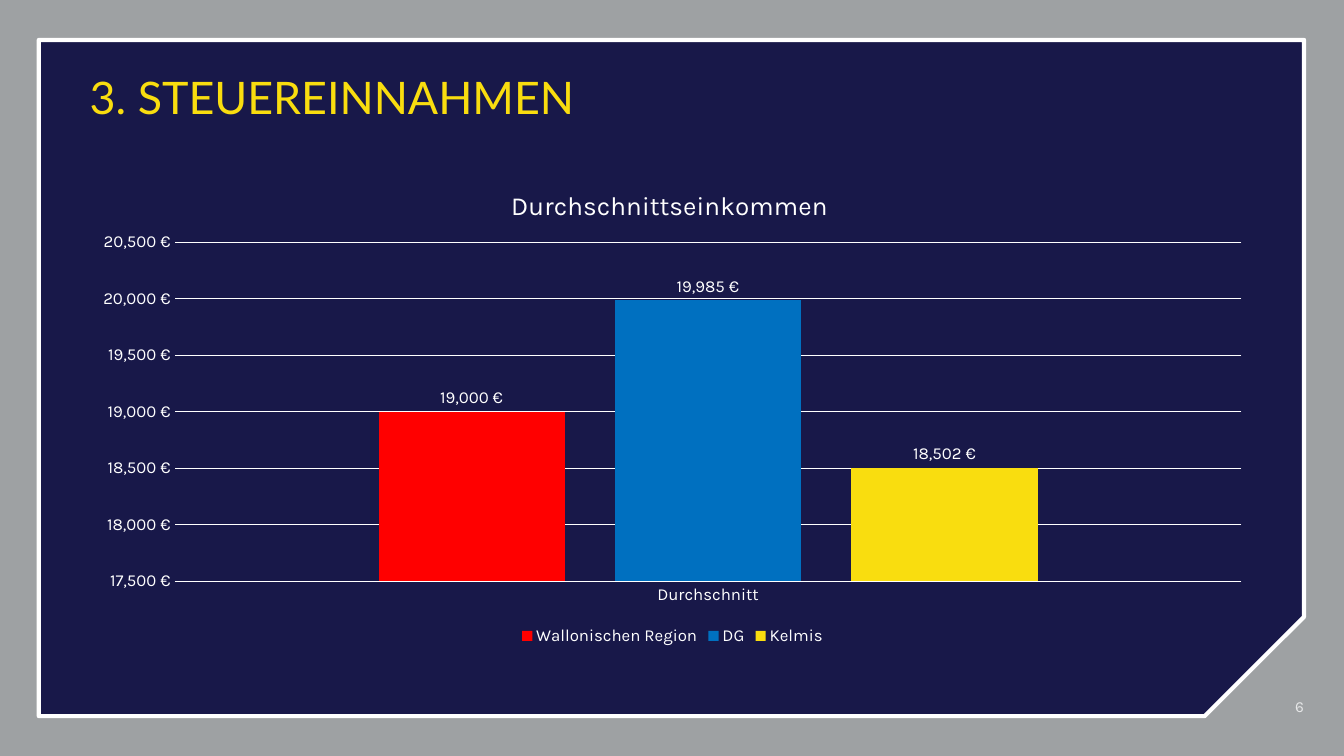
from lxml import etree
from pptx import Presentation
from pptx.chart.data import CategoryChartData
from pptx.dml.color import RGBColor
from pptx.enum.chart import XL_CHART_TYPE, XL_LABEL_POSITION, XL_LEGEND_POSITION, XL_TICK_MARK
from pptx.enum.shapes import MSO_SHAPE
from pptx.enum.text import MSO_ANCHOR, PP_ALIGN
from pptx.oxml.ns import qn
from pptx.util import Pt

SNIP = MSO_SHAPE.SNIP_1_RECTANGLE
COLUMN = XL_CHART_TYPE.COLUMN_CLUSTERED
ABOVE = XL_LABEL_POSITION.OUTSIDE_END
BELOW = XL_LEGEND_POSITION.BOTTOM
NO_TICK = XL_TICK_MARK.NONE
MIDDLE, BOTTOM = MSO_ANCHOR.MIDDLE, MSO_ANCHOR.BOTTOM
LEFT, RIGHT = PP_ALIGN.LEFT, PP_ALIGN.RIGHT
PX = 9525
EURO = '#,##0\\ "€"'


class Theme:
    back = "9EA1A3"
    panel = "181849"
    white = "FFFFFF"
    pale = "E6E7E8"
    red = "FF0000"
    blue = "0070C0"
    gold = "F9DD0F"
    head = {"name": "Lato", "size": Pt(32)}
    page = {"name": "Karla", "size": Pt(11)}
    label = {"name": "Karla", "size": Pt(12)}
    title = {"name": "Karla", "size": Pt(18.6), "bold": False}


BARS = [
    ("Wallonischen Region", 19000, Theme.red),
    ("DG", 19985, Theme.blue),
    ("Kelmis", 18502, Theme.gold),
]


def put(item, form):
    for key, value in form.items():
        setattr(item, key, value)


def paint(fill, color):
    fill.solid()
    fill.fore_color.rgb = RGBColor.from_string(color)


def style(font, form, color):
    put(font, form)
    font.color.rgb = RGBColor.from_string(color)


def stroke(line, color, width):
    paint(line.fill, color)
    line.width = Pt(width)


def scale(box):
    return [n * PX for n in box]


def panel(slide, box):
    shape = slide.shapes.add_shape(SNIP, *scale(box))
    shape.shadow.inherit = False
    shape.adjustments[0] = 0.147
    shape.rotation = 180
    shape._element.spPr.find(qn("a:xfrm")).set("flipH", "1")
    paint(shape.fill, Theme.panel)
    stroke(shape.line, Theme.white, 3)


def write(slide, box, text, form, color, frame, para):
    body = slide.shapes.add_textbox(*scale(box)).text_frame
    put(body, {"word_wrap": True, **frame})
    first = body.paragraphs[0]
    put(first, para)
    run = first.add_run()
    run.text = text
    style(run.font, form, color)


def place(owner, inner, **spots):
    old = owner.find(qn("c:layout"))
    if old is None:
        old = etree.Element(qn("c:layout"))
        after = owner.find(qn("c:tx"))
        if after is None:
            owner.insert(0, old)
        else:
            after.addnext(old)
    manual = etree.SubElement(old, qn("c:manualLayout"))
    rows = [("layoutTarget", "inner")] if inner else []
    rows += [("xMode", "edge"), ("yMode", "edge"), *spots.items()]
    for tag, value in rows:
        etree.SubElement(manual, qn(f"c:{tag}")).set("val", str(value))


def axes(chart):
    cat, val = chart.category_axis, chart.value_axis
    for axis in (cat, val):
        put(axis, {"major_tick_mark": NO_TICK, "minor_tick_mark": NO_TICK})
        style(axis.tick_labels.font, Theme.label, Theme.white)
    put(val, {"minimum_scale": 17500, "maximum_scale": 20500, "major_unit": 500,
              "has_major_gridlines": True})
    put(val.tick_labels, {"number_format": EURO, "number_format_is_linked": False})
    val.format.line.fill.background()
    stroke(cat.format.line, Theme.white, 0.75)
    stroke(val.major_gridlines.format.line, Theme.white, 0.75)


def bars(plot):
    put(plot, {"gap_width": 219, "overlap": -27, "vary_by_categories": False})
    for series, (_, _, color) in zip(plot.series, BARS):
        paint(series.format.fill, color)
        series.invert_if_negative = False
        labels = series.data_labels
        put(labels, {"show_value": True, "position": ABOVE,
                     "number_format": EURO, "number_format_is_linked": False})
        style(labels.font, Theme.label, Theme.white)


def graph(slide, box):
    data = CategoryChartData(number_format=EURO)
    data.categories = ["Durchschnitt"]
    for name, value, _ in BARS:
        data.add_series(name, [value])
    chart = slide.shapes.add_chart(COLUMN, *scale(box), data).chart
    style(chart.font, Theme.label, Theme.white)
    put(chart, {"has_title": True, "has_legend": True})
    title = chart.chart_title
    title.text_frame.text = "Durchschnittseinkommen"
    style(title.text_frame.paragraphs[0].runs[0].font, Theme.title, Theme.white)
    title.include_in_layout = False
    place(title._element, False, x=0.36, y=0.05)
    put(chart.legend, {"position": BELOW, "include_in_layout": False})
    style(chart.legend.font, Theme.label, Theme.white)
    axes(chart)
    bars(chart.plots[0])
    area = chart._chartSpace.chart.plotArea
    place(area, True, x=0.08, y=0.17, w=0.9, h=0.69)


def main():
    deck = Presentation()
    put(deck, {"slide_width": 1280 * PX, "slide_height": 720 * PX})
    slide = deck.slides.add_slide(deck.slide_layouts[6])
    paint(slide.background.fill, Theme.back)
    panel(slide, (37, 38, 1205, 644))
    write(slide, (76, 57, 1129, 76), "3. STEUEREINNAHMEN", Theme.head, Theme.gold,
          {"vertical_anchor": MIDDLE}, {"alignment": LEFT, "line_spacing": 0.9})
    write(slide, (1150, 590, 92, 92), "6", Theme.page, Theme.pale,
          {"vertical_anchor": BOTTOM, "margin_left": 15 * PX, "margin_top": 15 * PX,
           "margin_right": 0, "margin_bottom": 0}, {"alignment": RIGHT})
    graph(slide, (76, 151, 1129, 468))
    deck.save("out.pptx")


if __name__ == "__main__":
    main()
